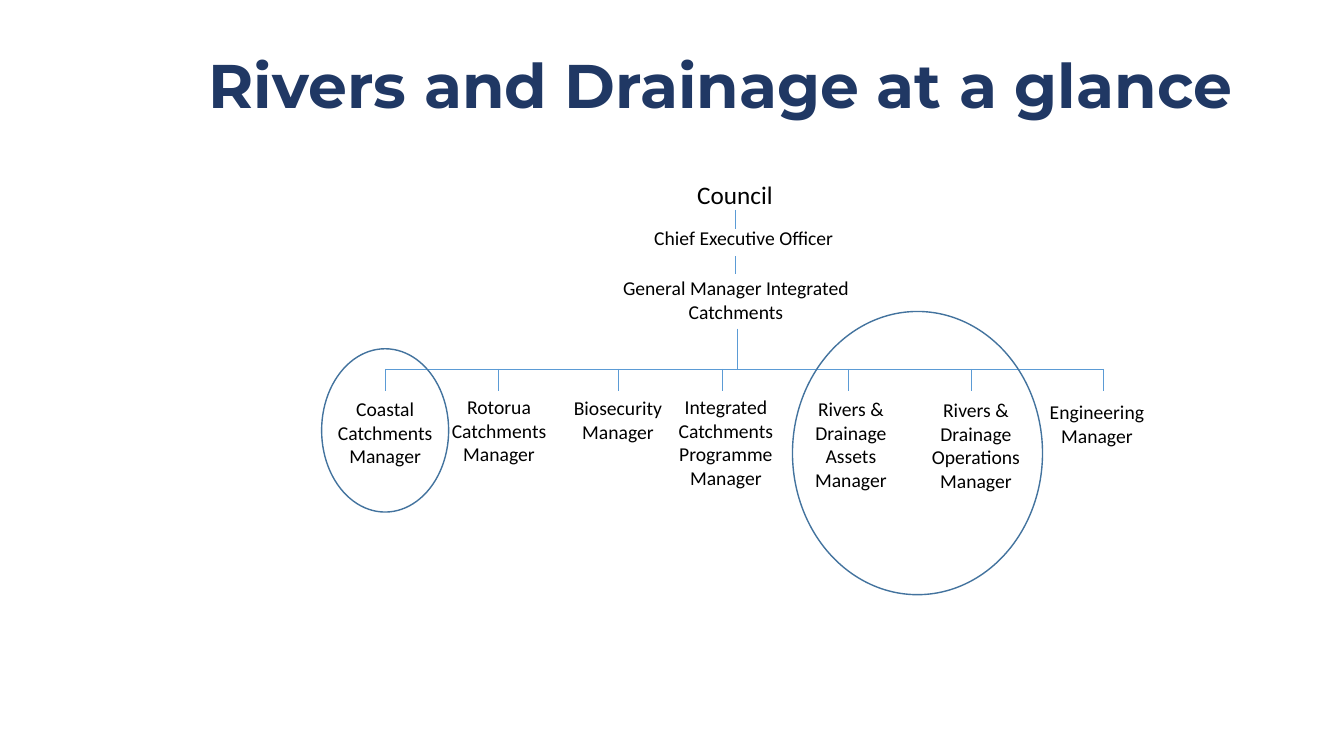
from lxml import etree
from pptx import Presentation
from pptx import util as u
from pptx.dml.color import RGBColor
from pptx.enum import shapes, text
from pptx.oxml.ns import qn

COLORS = {"title": "203864", "text": "000000", "line": "5B9BD5", "ring": "43739E"}
CELL = u.Inches(0.1)  # one column or row of the slide grid

# Boxes are (left, top, width, height) in grid cells
TITLE_BOX = (19.7, 4, 106.4, 9.5)
CHART_BOX = (31.9, 17.3, 82.7, 41.7)

# Upper roles: name, size, alignment, box within the chart
CENTER, LEFT = text.PP_ALIGN.CENTER, text.PP_ALIGN.LEFT
LEADERS = [
    ("Council", 18, CENTER, (33.7, 0, 14.6, 4)),
    ("Chief Executive Officer", 14, LEFT, (32, 4.6, 19.8, 3.4)),
    ("General Manager Integrated Catchments", 14, CENTER, (27.4, 9.6, 27.4, 5.7)),
]
# Managers: name, line count, x of the drop line, left and top of the label
MANAGERS = [
    ("Coastal Catchments Manager", 3, 6.3, 0.5, 21.6),
    ("Rotorua Catchments Manager", 3, 17.5, 11.8, 21.4),
    ("Biosecurity Manager", 2, 29.4, 23.6, 21.5),
    ("Integrated Catchments Programme Manager", 4, 39.7, 34.3, 21.4),
    ("Rivers & Drainage Assets Manager", 4, 52.2, 46.7, 21.6),
    ("Rivers & Drainage Operations Manager", 4, 64.4, 59.1, 21.7),
    ("Engineering Manager", 2, 77.5, 71.1, 21.9),
]
BAR_Y, DROP, LABEL_W, LINE_H, PADDING = 19.3, 2.2, 11.6, 2.35, 1
# Trunk segments: x, top, bottom
TRUNK = [(41, 3.5, 5.4), (41, 8.1, 9.9), (41.2, 15.3, BAR_Y)]
RINGS = [(46.7, 13.6, 24.8, 28.1), (0, 17.3, 12.6, 16.2)]


def color(name):
    return RGBColor.from_string(COLORS[name])


def place(box, part):
    """Turn a part of a box, in cells, into slide lengths."""
    x, y, w, h = part
    return [round(n * CELL) for n in (box[0] + x, box[1] + y, w, h)]


def add_run(p, words, size, font, shade, bold=False):
    r = p.add_run()
    r.text = words
    r.font.size, r.font.name, r.font.bold = u.Pt(size), font, bold
    r.font.color.rgb = color(shade)


def add_label(slide, box, part, words, size, align):
    tf = slide.shapes.add_textbox(*place(box, part)).text_frame
    tf.word_wrap = True
    tf.auto_size = text.MSO_AUTO_SIZE.SHAPE_TO_FIT_TEXT
    p = tf.paragraphs[0]
    p.alignment = align
    add_run(p, words, size, "Calibri", "text")


def add_line(slide, box, x1, y1, x2, y2):
    x, y, w, h = place(box, (x1, y1, x2 - x1, y2 - y1))
    sp = slide.shapes.add_connector(shapes.MSO_CONNECTOR.STRAIGHT, x, y, x + w, y + h)
    sp.line.color.rgb, sp.line.width = color("line"), u.Pt(0.5)
    etree.SubElement(sp._element.spPr, qn("a:effectLst"))


def add_ring(slide, box, part):
    sp = slide.shapes.add_shape(shapes.MSO_SHAPE.OVAL, *place(box, part))
    sp.shadow.inherit = False
    sp.fill.background()
    sp.line.color.rgb, sp.line.width = color("ring"), u.Pt(1)


def add_title(slide, box, words):
    sp = slide.shapes.title
    sp.left, sp.top, sp.width, sp.height = place(box, (0, 0, *box[2:]))
    tf = sp.text_frame
    tf.auto_size = text.MSO_AUTO_SIZE.NONE
    tf.vertical_anchor = text.MSO_ANCHOR.MIDDLE
    p = tf.paragraphs[0]
    p.alignment, p.line_spacing = LEFT, 0.9
    add_run(p, words, 44, "Montserrat", "title", bold=True)


def add_org_chart(slide, box):
    # Leadership and trunk
    for words, size, align, part in LEADERS:
        add_label(slide, box, part, words, size, align)
    for x, top, bottom in TRUNK:
        add_line(slide, box, x, top, x, bottom)

    # Crossbar and managers
    add_line(slide, box, MANAGERS[0][2], BAR_Y, MANAGERS[-1][2], BAR_Y)
    for words, lines, x, left, top in MANAGERS:
        add_line(slide, box, x, BAR_Y, x, BAR_Y + DROP)
        part = (left, top, LABEL_W, lines * LINE_H + PADDING)
        add_label(slide, box, part, words, 14, CENTER)

    # Highlight rings
    for ring in RINGS:
        add_ring(slide, box, ring)


def main():
    prs = Presentation()
    prs.slide_width, prs.slide_height = u.Inches(13.33), u.Inches(7.5)
    slide = prs.slides.add_slide(prs.slide_layouts[5])
    add_title(slide, TITLE_BOX, "Rivers and Drainage at a glance")
    add_org_chart(slide, CHART_BOX)
    prs.save("out.pptx")


if __name__ == "__main__":
    main()
